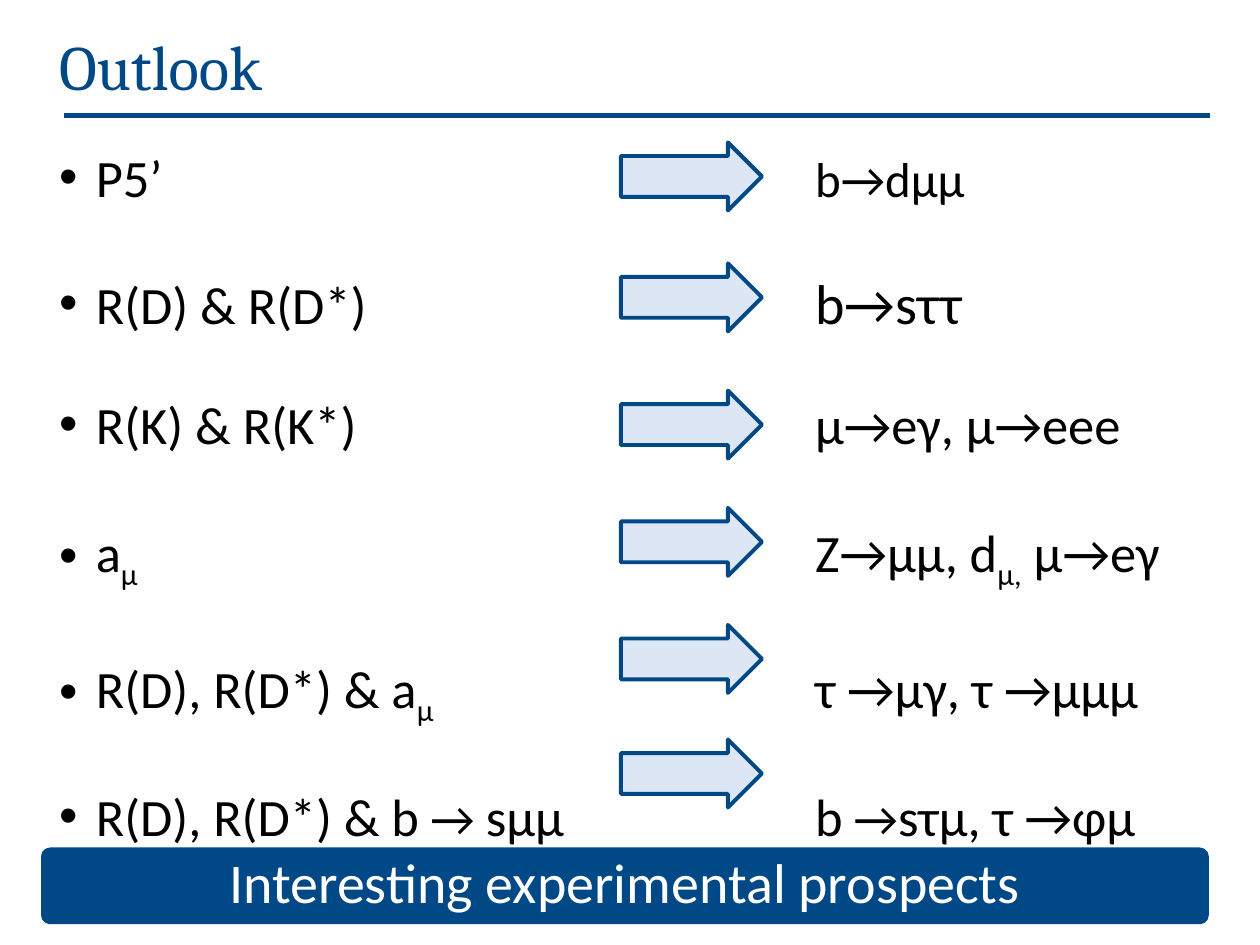
import pptx
import pptx.util
import pptx.dml.color
import pptx.enum.shapes
import pptx.enum.text
import pptx.oxml
import pptx.oxml.ns
from lxml import etree

Pt = pptx.util.Pt
RGBColor = pptx.dml.color.RGBColor
SHAPE = pptx.enum.shapes.MSO_SHAPE

NAVY = RGBColor(0x00, 0x49, 0x86)
PALE = RGBColor(0xDC, 0xE6, 0xF4)
BLACK = RGBColor(0, 0, 0)
WHITE = RGBColor(0xFF, 0xFF, 0xFF)

# Content: arrow top, then (text, size, is subscript) for anomaly and prospect
TITLE = "Outlook"
BANNER = "Interesting experimental prospects"
ROWS = [
    (81.4, [("P5’", 30, False)], [("b→dμμ", 28, False)]),
    (150.5, [("R(D) & R(D*)", 30, False)], [("b→sττ", 32, False)]),
    (223.2, [("R(K) & R(K*)", 30, False)], [("μ→eγ, μ→eee", 30, False)]),
    (290.2, [("a", 30, False), ("μ", 30, True)],
     [("Z→μμ, d", 30, False), ("μ,", 30, True), (" μ→eγ", 30, False)]),
    (357.1, [("R(D), R(D*) & a", 30, False), ("μ", 30, True)],
     [("τ →μγ, τ →μμμ", 30, False)]),
    (422.6, [("R(D), R(D*) & b", 30, False), (" → ", 28, False), ("sμμ", 30, False)],
     [("b", 30, False), (" →", 28, False), ("sτμ, τ →φμ", 30, False)]),
]
LEFT = 33.8
INDENT = 21
PROSPECT_TAB = 432


def add_run(para, text, size, color, font="Calibri", subscript=False):
    span = para.add_run()
    span.text = text
    span.font.size = Pt(size)
    span.font.name = font
    span.font.color.rgb = color
    if subscript:
        span.font._element.set("baseline", "-25000")


def add_box(left, top, width, height):
    frame = page.shapes.add_textbox(Pt(left), Pt(top), Pt(width), Pt(height)).text_frame
    frame.word_wrap = True
    frame.margin_left = frame.margin_right = frame.margin_top = frame.margin_bottom = 0
    return frame


def add_shape(kind, left, top, width, height, fill, line_width, adjustments):
    shape = page.shapes.add_shape(kind, Pt(left), Pt(top), Pt(width), Pt(height))
    shape.shadow.inherit = False
    shape.fill.solid()
    shape.fill.fore_color.rgb = fill
    shape.line.color.rgb = NAVY
    shape.line.width = Pt(line_width)
    for index, value in enumerate(adjustments):
        shape.adjustments[index] = value
    return shape


def set_bullet_and_tab(para):
    props = para._p.get_or_add_pPr()
    props.set("marL", str(Pt(INDENT)))
    props.set("indent", str(-Pt(INDENT)))
    namespace = pptx.oxml.ns.nsdecls("a")
    for xml in (
        f'<a:buClr {namespace}><a:srgbClr val="{BLACK}"/></a:buClr>',
        f'<a:buFont {namespace} typeface="Arial"/>',
        f'<a:buChar {namespace} char="•"/>',
        f'<a:tabLst {namespace}><a:tab pos="{Pt(PROSPECT_TAB)}" algn="l"/></a:tabLst>',
    ):
        props.append(pptx.oxml.parse_xml(xml))


deck = pptx.Presentation()
deck.slide_width, deck.slide_height = Pt(720), Pt(540)
page = deck.slides.add_slide(deck.slide_layouts[6])

# Title and rule
title = add_box(LEFT, 15.8, 528.5, 40.3)
add_run(title.paragraphs[0], TITLE, 36, NAVY, "Cambria")
rule = page.shapes.add_connector(
    pptx.enum.shapes.MSO_CONNECTOR.STRAIGHT, Pt(36.5), Pt(66), Pt(691.5), Pt(66))
rule.line.color.rgb = NAVY
rule.line.width = Pt(2.5)
etree.SubElement(rule._element.spPr, pptx.oxml.ns.qn("a:effectLst"))

# Anomalies, each with its prospect at the tab stop
body = add_box(LEFT, 50.4, 657.4, 442)
for number, (arrow_top, anomaly, prospect) in enumerate(ROWS):
    para = body.paragraphs[0] if number == 0 else body.add_paragraph()
    set_bullet_and_tab(para)
    para.line_spacing = 1.9
    for text, size, subscript in anomaly + [("\t", 30, False)] + prospect:
        add_run(para, text, size, BLACK, subscript=subscript)
    add_shape(SHAPE.RIGHT_ARROW, 354.8, arrow_top, 80.6, 38.9, PALE, 2.25, [0.6, 0.5])

# Banner
banner = add_shape(SHAPE.ROUNDED_RECTANGLE, 24.5, 485.3, 665.3, 41.8, NAVY, 2, [0.1])
frame = banner.text_frame
frame.margin_top = frame.margin_bottom = 0
frame.vertical_anchor = pptx.enum.text.MSO_ANCHOR.MIDDLE
para = frame.paragraphs[0]
para.alignment = pptx.enum.text.PP_ALIGN.CENTER
para.line_spacing = 0.9
add_run(para, BANNER, 32, WHITE)

deck.save("out.pptx")
